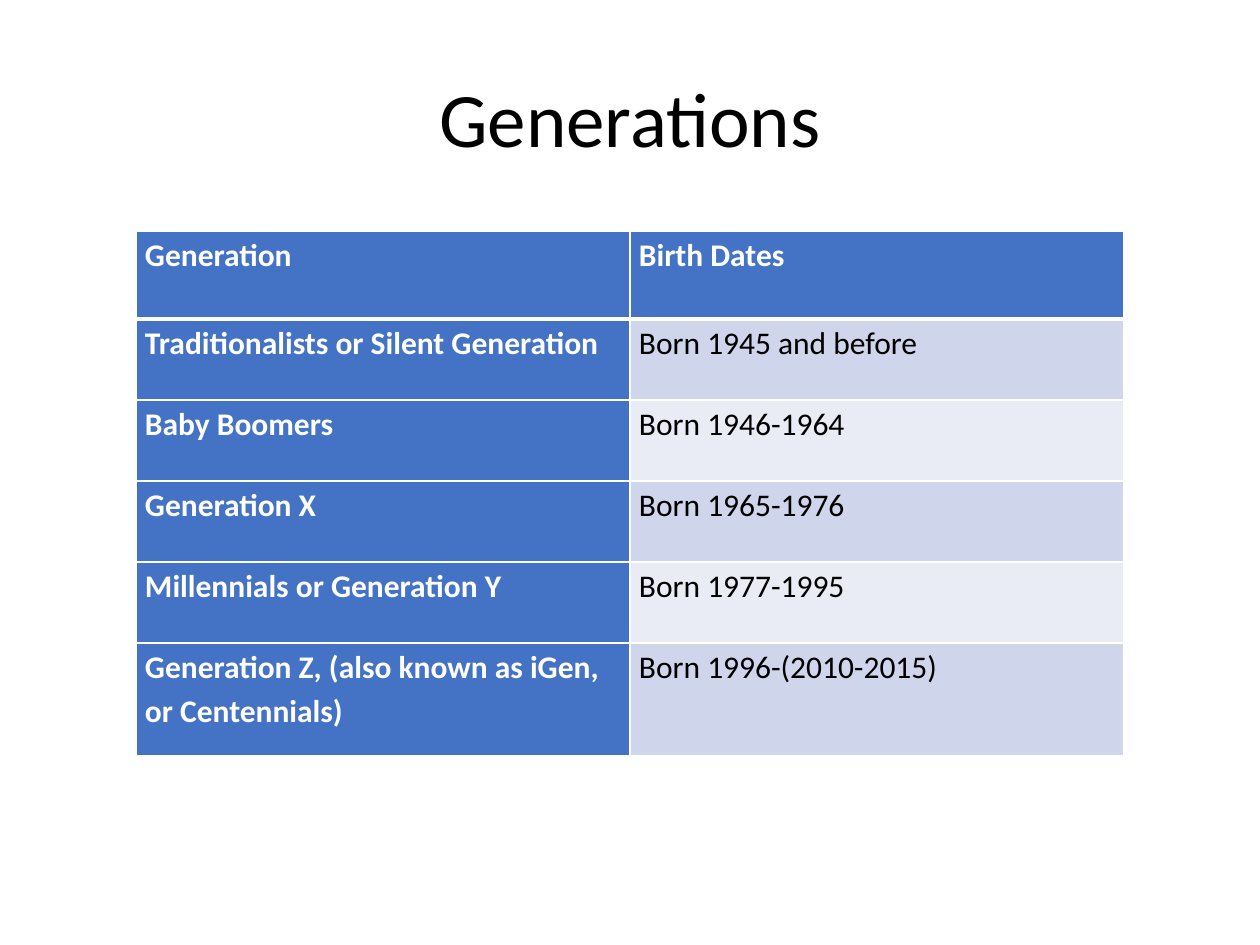
from pptx import Presentation
from pptx.dml.color import RGBColor
from pptx.enum.text import MSO_ANCHOR as Anchor, PP_ALIGN as Align
from pptx.oxml import parse_xml
from pptx.oxml.ns import nsdecls
from pptx.util import Emu, Pt

FONT = "Calibri"
BLACK = RGBColor(0x00, 0x00, 0x00)
WHITE = RGBColor(0xFF, 0xFF, 0xFF)
BLUE = RGBColor(0x44, 0x72, 0xC4)
BANDS = (RGBColor(0xCF, 0xD5, 0xEA), RGBColor(0xE9, 0xEB, 0xF5))

LEFT, WIDTH = 136, 988
ROW_HEIGHTS = (88, 81, 81, 81, 81, 113)
GENERATIONS = (
    ("Generation", "Birth Dates"),
    ("Traditionalists or Silent Generation", "Born 1945 and before"),
    ("Baby Boomers", "Born 1946-1964"),
    ("Generation X", "Born 1965-1976"),
    ("Millennials or Generation Y", "Born 1977-1995"),
    ("Generation Z, (also known as iGen, or Centennials)", "Born 1996-(2010-2015)"),
)


def px(length):
    """Convert pixels, 126 to the inch, to EMU."""
    return Emu(round(length * 914400 / 126))


def write_text(frame, text, size=18, color=BLACK, bold=False, align=Align.LEFT,
               line_spacing=None, space_after=None):
    paragraph = frame.paragraphs[0]
    paragraph.alignment = align
    paragraph.line_spacing = line_spacing
    paragraph.space_after = space_after
    run = paragraph.add_run()
    run.text = text
    run.font.name = FONT
    run.font.size = Pt(size)
    run.font.bold = bold
    run.font.color.rgb = color


def add_title(slide, text):
    title = slide.shapes.title
    title.left, title.top, title.width, title.height = map(px, (LEFT, 38, WIDTH, 158))
    title.text_frame.vertical_anchor = Anchor.MIDDLE
    write_text(title.text_frame, text, size=44, align=Align.CENTER)


def set_borders(cell, top=1, bottom=1):
    widths = {"lnL": 1, "lnR": 1, "lnT": top, "lnB": bottom}
    properties = cell._tc.get_or_add_tcPr()
    for tag, width in widths.items():
        properties.append(parse_xml(
            f'<a:{tag} {nsdecls("a")} w="{Pt(width)}"><a:solidFill>'
            f'<a:srgbClr val="{WHITE}"/></a:solidFill></a:{tag}>'))


def format_cell(cell, text, fill, **text_format):
    cell.margin_left = cell.margin_right = px(9)
    cell.margin_top = cell.margin_bottom = 0
    cell.vertical_anchor = Anchor.TOP
    cell.fill.solid()
    cell.fill.fore_color.rgb = fill
    write_text(cell.text_frame, text, line_spacing=1.15, space_after=Pt(18), **text_format)


def add_generation_table(slide):
    frame = slide.shapes.add_table(len(GENERATIONS), 2, px(LEFT), px(231),
                                   px(WIDTH), px(sum(ROW_HEIGHTS)))
    table = frame.table
    table.first_col = True
    for row, height in zip(table.rows, ROW_HEIGHTS):
        row.height = px(height)
    for row_index, labels in enumerate(GENERATIONS):
        for column_index, label in enumerate(labels):
            cell = table.cell(row_index, column_index)
            # A thicker rule separates the header from the body
            set_borders(cell, top=3 if row_index == 1 else 1,
                        bottom=3 if row_index == 0 else 1)
            if row_index == 0 or column_index == 0:
                format_cell(cell, label, BLUE, color=WHITE, bold=True)
            else:
                format_cell(cell, label, BANDS[(row_index - 1) % 2])


def main():
    presentation = Presentation()
    presentation.slide_width, presentation.slide_height = px(1260), px(945)
    slide = presentation.slides.add_slide(presentation.slide_layouts[5])
    slide.background.fill.solid()
    slide.background.fill.fore_color.rgb = WHITE
    add_title(slide, "Generations")
    add_generation_table(slide)
    presentation.save("out.pptx")


if __name__ == "__main__":
    main()
